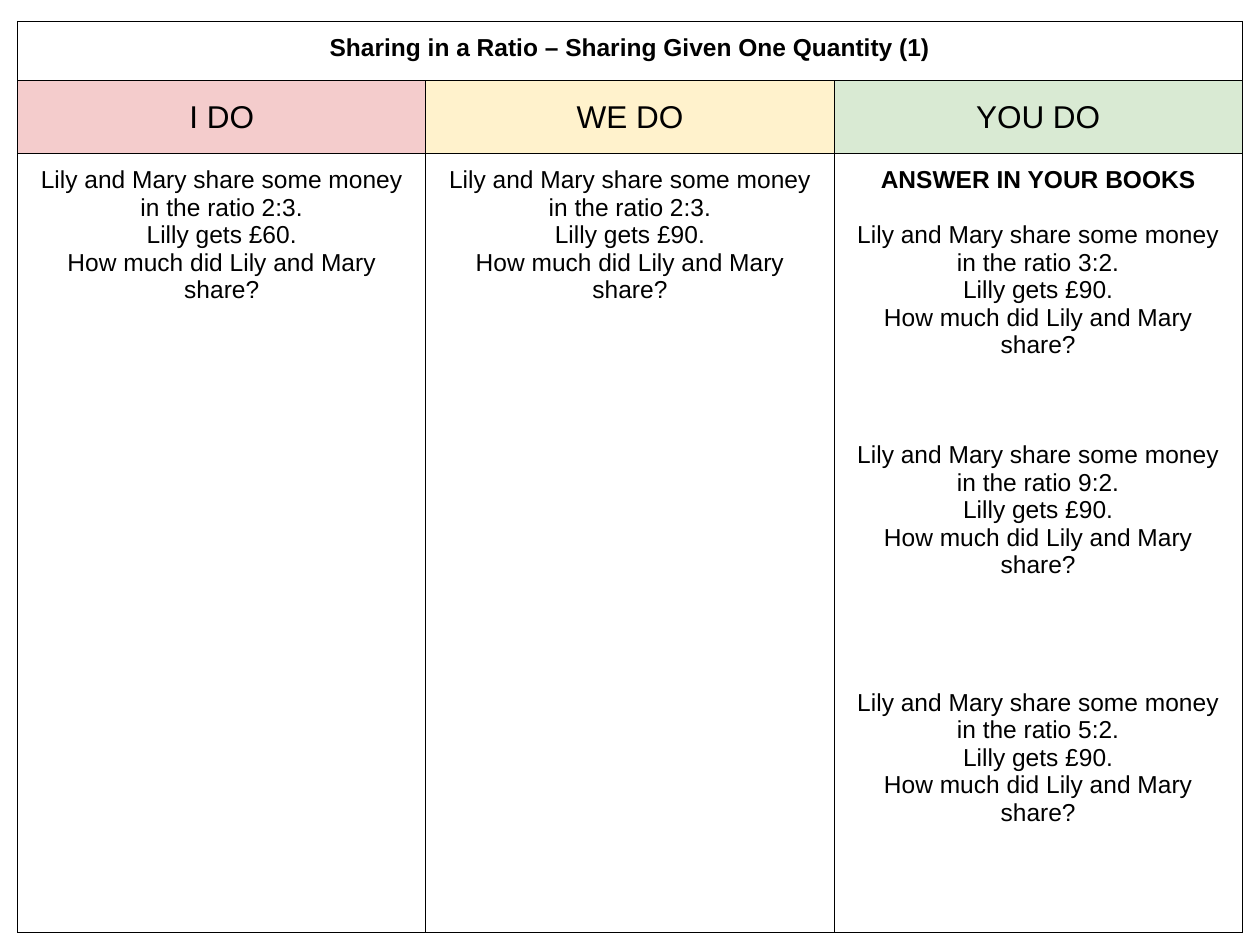
from dataclasses import dataclass
from typing import Optional

from lxml import etree
from pptx import Presentation
from pptx.dml.color import RGBColor
from pptx.enum.text import MSO_ANCHOR, PP_ALIGN
from pptx.oxml.ns import qn
from pptx.table import Table, _Cell
from pptx.util import Inches, Length, Pt

CENTER = PP_ALIGN.CENTER
TOP = MSO_ANCHOR.TOP
MIDDLE = MSO_ANCHOR.MIDDLE


@dataclass(frozen=True)
class Theme:
    font: str = "Arial"
    ink: str = "000000"
    i_do: str = "F4CCCC"
    we_do: str = "FFF2CC"
    you_do: str = "D9EAD3"
    body_size: Length = Pt(14)
    heading_size: Length = Pt(18)
    line_pitch: Length = Pt(15.7)
    border: Length = Pt(0.75)
    inset: Length = Inches(0.1)


@dataclass(frozen=True)
class Line:
    text: str
    bold: bool = False
    lines_before: int = 0


@dataclass(frozen=True)
class Column:
    heading: str
    color: str
    body: list[Line]


THEME = Theme()


def question(ratio: str, amount: int, lines_before: int = 0) -> list[Line]:
    """One ratio problem, set below the given number of free lines."""
    return [
        Line(f"Lily and Mary share some money in the ratio {ratio}.", lines_before=lines_before),
        Line(f"Lilly gets £{amount}."),
        Line("How much did Lily and Mary share?"),
    ]


TITLE = Line("Sharing in a Ratio – Sharing Given One Quantity (1)", bold=True)
COLUMNS = [
    Column("I DO", THEME.i_do, question("2:3", 60)),
    Column("WE DO", THEME.we_do, question("2:3", 90)),
    Column("YOU DO", THEME.you_do, [
        Line("ANSWER IN YOUR BOOKS", bold=True),
        *question("3:2", 90, lines_before=1),
        *question("9:2", 90, lines_before=3),
        *question("5:2", 90, lines_before=4),
    ]),
]
ROW_HEIGHTS = [Inches(0.47), Inches(0.58), Inches(6.18)]
COLUMN_WIDTH = Inches(3.24)


def draw_borders(cell: _Cell) -> None:
    properties = cell._tc.get_or_add_tcPr()
    for side in ("a:lnL", "a:lnR", "a:lnT", "a:lnB"):
        line = etree.SubElement(properties, qn(side), w=str(THEME.border))
        fill = etree.SubElement(line, qn("a:solidFill"))
        etree.SubElement(fill, qn("a:srgbClr"), val=THEME.ink)


def style_cell(cell: _Cell, color: Optional[str] = None) -> None:
    draw_borders(cell)
    cell.margin_left = cell.margin_right = THEME.inset
    cell.margin_top = cell.margin_bottom = THEME.inset
    if color is None:
        cell.fill.background()
    else:
        cell.fill.solid()
        cell.fill.fore_color.rgb = RGBColor.from_string(color)


def write_lines(cell: _Cell, lines: list[Line], size: Length, anchor: MSO_ANCHOR = TOP) -> None:
    cell.vertical_anchor = anchor
    frame = cell.text_frame
    for index, line in enumerate(lines):
        paragraph = frame.add_paragraph() if index else frame.paragraphs[0]
        paragraph.alignment = CENTER
        if line.lines_before:
            paragraph.space_before = Length(line.lines_before * THEME.line_pitch)
        run = paragraph.add_run()
        run.text = line.text
        run.font.name = THEME.font
        run.font.size = size
        run.font.bold = line.bold
        run.font.color.rgb = RGBColor.from_string(THEME.ink)


def fill_table(table: Table) -> None:
    table.first_row = False
    table.horz_banding = False
    for row, height in zip(table.rows, ROW_HEIGHTS):
        row.height = height

    # Title across all columns
    title_cell = table.cell(0, 0)
    title_cell.merge(table.cell(0, len(COLUMNS) - 1))
    write_lines(title_cell, [TITLE], THEME.body_size)

    # Heading and questions of each column
    for index, column in enumerate(COLUMNS):
        table.columns[index].width = COLUMN_WIDTH
        title_part, heading, body = (table.cell(row, index) for row in range(3))
        style_cell(title_part)
        style_cell(heading, column.color)
        style_cell(body)
        write_lines(heading, [Line(column.heading)], THEME.heading_size, MIDDLE)
        write_lines(body, column.body, THEME.body_size)


def main() -> None:
    presentation = Presentation()
    presentation.slide_width = Inches(10)
    presentation.slide_height = Inches(7.5)
    slide = presentation.slides.add_slide(presentation.slide_layouts[6])

    # Lesson grid
    shape = slide.shapes.add_table(
        len(ROW_HEIGHTS), len(COLUMNS), Inches(0.14), Inches(0.17),
        Length(COLUMN_WIDTH * len(COLUMNS)), Length(sum(ROW_HEIGHTS)))
    fill_table(shape.table)
    presentation.save("out.pptx")


if __name__ == "__main__":
    main()
